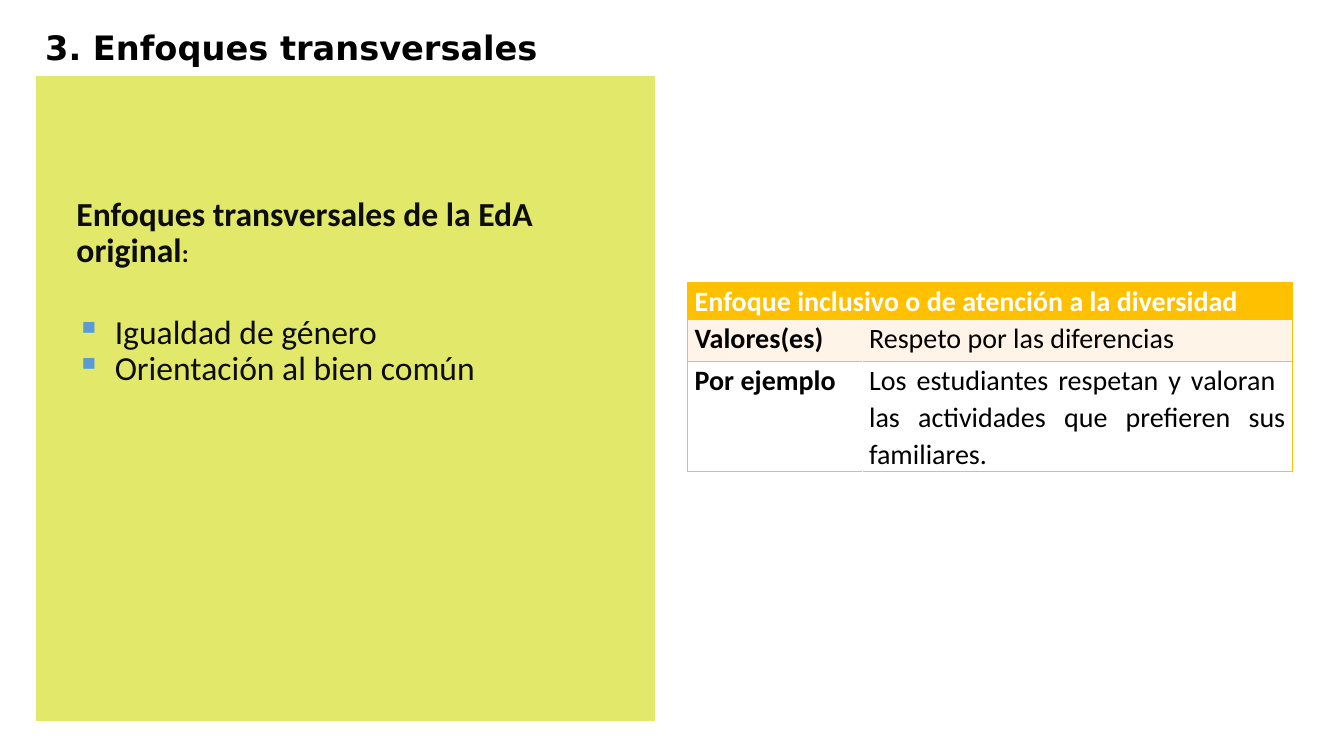
from lxml.etree import SubElement
from pptx import Presentation
from pptx.dml.color import RGBColor
from pptx.enum.shapes import MSO_SHAPE
from pptx.enum.text import PP_ALIGN
from pptx.oxml.ns import qn
from pptx.util import Inches, Pt

BLACK = RGBColor(0x00, 0x00, 0x00)
WHITE = RGBColor(0xFF, 0xFF, 0xFF)
INK = RGBColor(0x0D, 0x0D, 0x0D)
LIME = RGBColor(0xE2, 0xE8, 0x6A)
BLUE = RGBColor(0x5B, 0x9B, 0xD5)
AMBER = RGBColor(0xFF, 0xC0, 0x00)
CREAM = RGBColor(0xFF, 0xF4, 0xE7)
GREY = RGBColor(0xBF, 0xBF, 0xBF)


class SlideBuilder:
    body_font = "Calibri"
    title_font = "DejaVu Sans"

    def __init__(self, slide):
        self.slide = slide

    def panel(self, left, top, width, height, color):
        panel = self.slide.shapes.add_shape(
            MSO_SHAPE.RECTANGLE, Inches(left), Inches(top), Inches(width), Inches(height))
        panel.shadow.inherit = False
        panel.fill.solid()
        panel.fill.fore_color.rgb = color
        panel.line.color.rgb = WHITE
        panel.line.width = Pt(1)

    def style(self, paragraph, size, color, bold=False, font=None):
        paragraph.font.name = font or self.body_font
        paragraph.font.size = Pt(size)
        paragraph.font.bold = bold
        paragraph.font.color.rgb = color

    def text(self, left, top, width, height, lines, color=INK, bold=False, font=None):
        frame = self.slide.shapes.add_textbox(
            Inches(left), Inches(top), Inches(width), Inches(height)).text_frame
        frame.word_wrap = True
        frame.text = "\n".join(lines)
        for paragraph in frame.paragraphs:
            paragraph.line_spacing = 0.9
            self.style(paragraph, 24, color, bold, font)
        return frame

    def bullets(self, left, top, width, height, lines):
        for paragraph in self.text(left, top, width, height, lines).paragraphs:
            properties = paragraph._p.get_or_add_pPr()
            properties.set("marL", str(Inches(0.38)))
            properties.set("indent", str(-Inches(0.38)))
            bullet_color = SubElement(properties, qn("a:buClr"))
            SubElement(bullet_color, qn("a:srgbClr"), val=str(BLUE))
            SubElement(properties, qn("a:buChar"), char="▪")
            # Fonts must follow the bullet in the paragraph properties
            properties.append(properties.find(qn("a:defRPr")))

    def table(self, left, top, widths, heights):
        table = self.slide.shapes.add_table(
            len(heights), len(widths), Inches(left), Inches(top),
            Inches(sum(widths)), Inches(sum(heights))).table
        for column, width in zip(table.columns, widths):
            column.width = Inches(width)
        for row, height in zip(table.rows, heights):
            row.height = Inches(height)
        return table

    def cell(self, cell, text, fill, borders, color=BLACK, bold=False):
        cell.margin_left = cell.margin_right = Inches(0.07)
        cell.margin_top = cell.margin_bottom = 0
        paragraph = cell.text_frame.paragraphs[0]
        paragraph.text = text
        paragraph.line_spacing = 1.07
        paragraph.space_after = Pt(8)
        self.style(paragraph, 20, color, bold)
        # Borders go before the fill: left, right, top, bottom
        properties = cell._tc.get_or_add_tcPr()
        for side, border in zip("LRTB", borders):
            width = Pt(1) if border == AMBER else Pt(0.5)
            line = SubElement(properties, qn(f"a:ln{side}"), w=str(width))
            line_fill = SubElement(line, qn("a:solidFill"))
            SubElement(line_fill, qn("a:srgbClr"), val=str(border))
        cell.fill.solid()
        cell.fill.fore_color.rgb = fill
        return paragraph


def main():
    presentation = Presentation()
    presentation.slide_width = Inches(13.33)
    presentation.slide_height = Inches(7.5)
    builder = SlideBuilder(presentation.slides.add_slide(presentation.slide_layouts[6]))

    # Title and left panel
    builder.panel(0.35, 0.75, 6.15, 6.41, LIME)
    builder.text(0.35, 0.26, 5.26, 0.49, ["3. Enfoques transversales"],
                 BLACK, True, builder.title_font)

    # Approaches listed in the panel
    builder.bullets(0.66, 3.08, 5.09, 0.88,
                    ["Igualdad de género", "Orientación al bien común"])
    heading = builder.text(0.66, 1.91, 5.09, 0.88,
                           ["Enfoques transversales de la EdA original"], bold=True)
    colon = heading.paragraphs[0].add_run()
    colon.text = ":"
    colon.font.size = Pt(18)

    # Table of the inclusive approach
    approach = builder.table(6.82, 2.8, [1.73, 4.27], [0.37, 0.42, 1.09])
    approach.cell(0, 0).merge(approach.cell(0, 1))
    for column, title in enumerate(["Enfoque inclusivo o de atención a la diversidad", ""]):
        builder.cell(approach.cell(0, column), title, AMBER, [AMBER] * 4, WHITE, True)
    rows = [
        ("Valores(es)", "Respeto por las diferencias", CREAM, AMBER),
        ("Por ejemplo", "Los estudiantes respetan y valoran ", WHITE, GREY),
    ]
    for row, (label, detail, fill, top) in enumerate(rows, 1):
        builder.cell(approach.cell(row, 0), label, fill, [GREY, fill, top, GREY], bold=True)
        example = builder.cell(approach.cell(row, 1), detail, fill, [fill, AMBER, top, GREY])

    # The example continues after a smaller fixed space
    example.alignment = PP_ALIGN.JUSTIFY
    for text, size in [(" ", 16), ("las actividades que prefieren sus familiares.", 20)]:
        run = example.add_run()
        run.text = text
        run.font.size = Pt(size)

    presentation.save("out.pptx")


if __name__ == "__main__":
    main()
